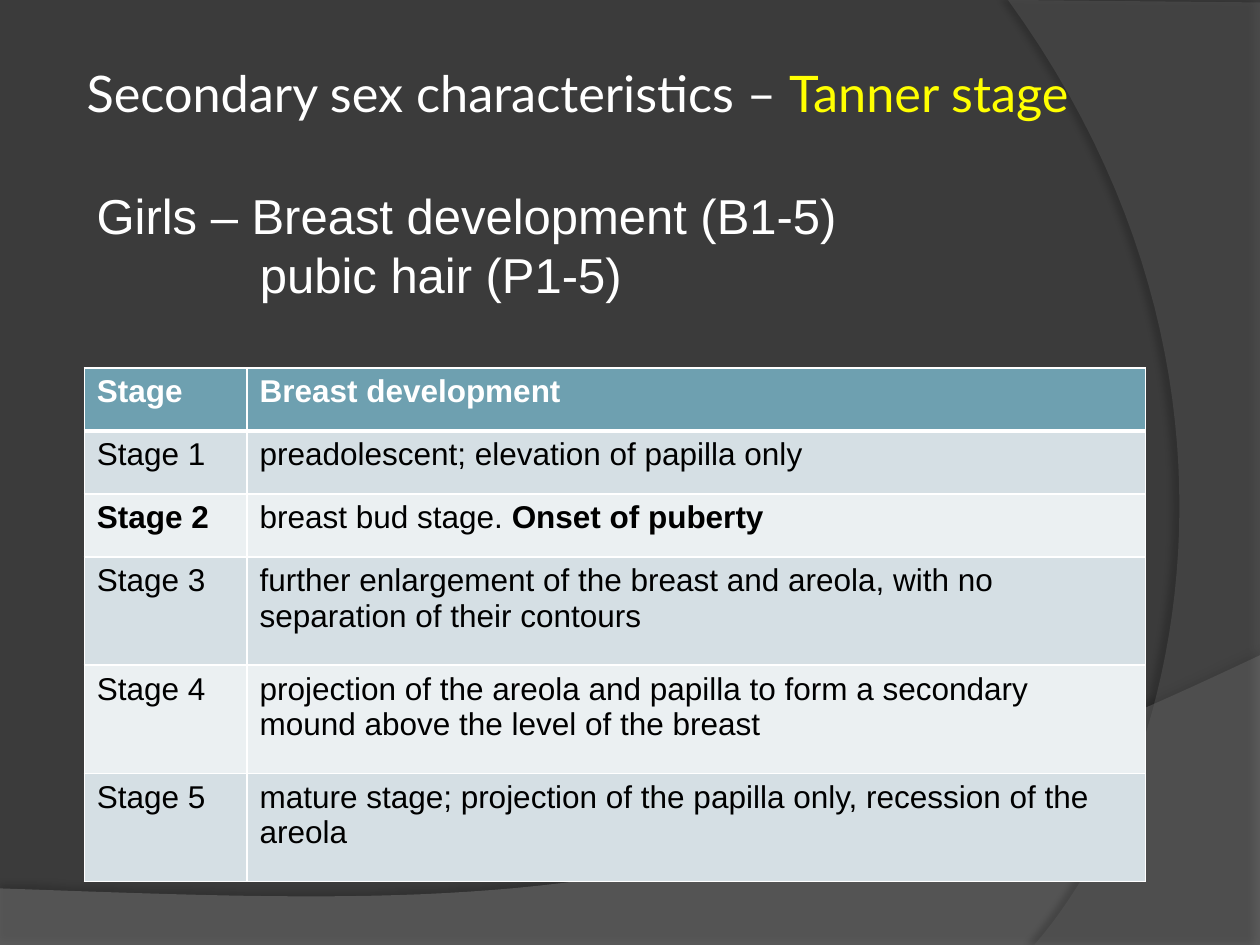
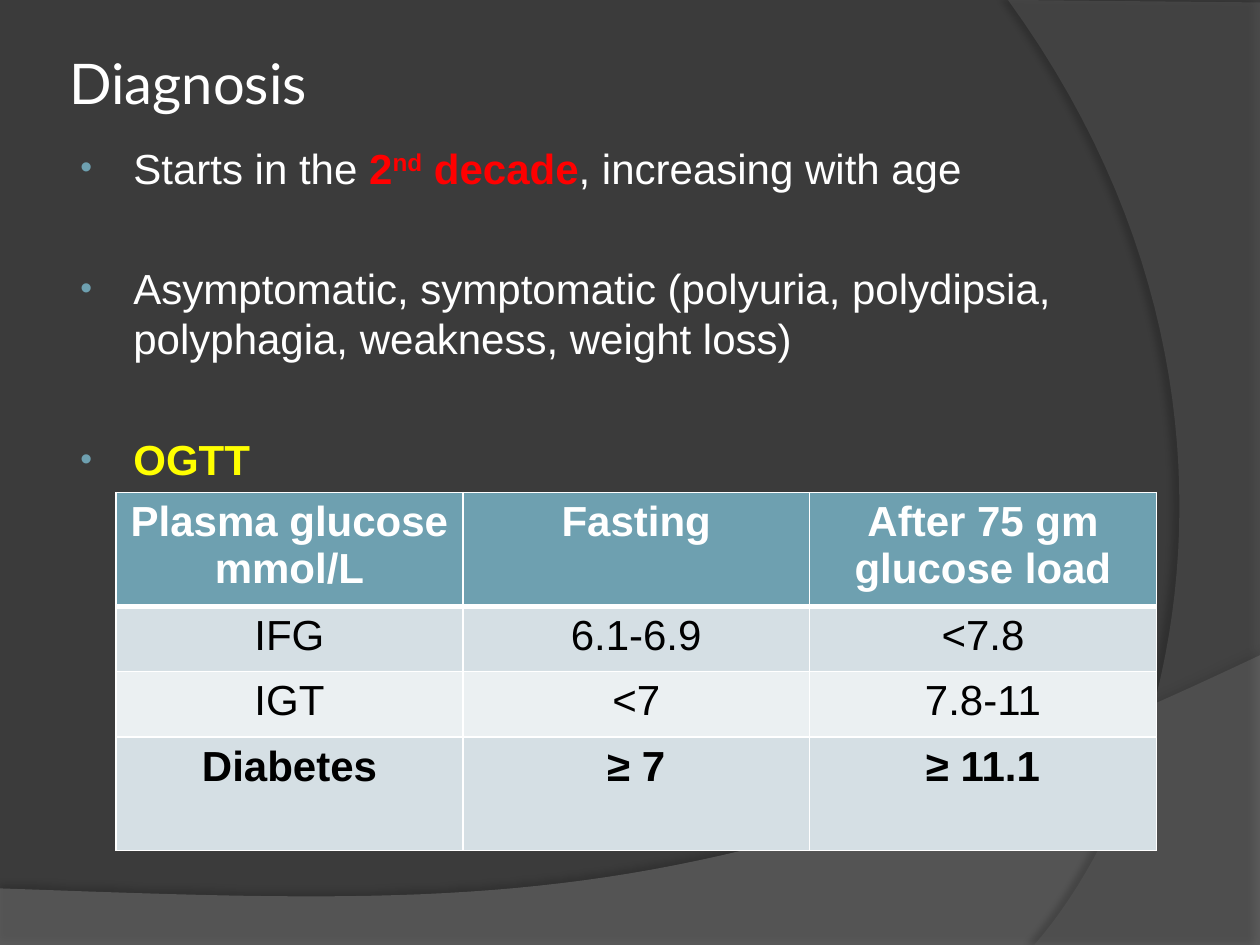
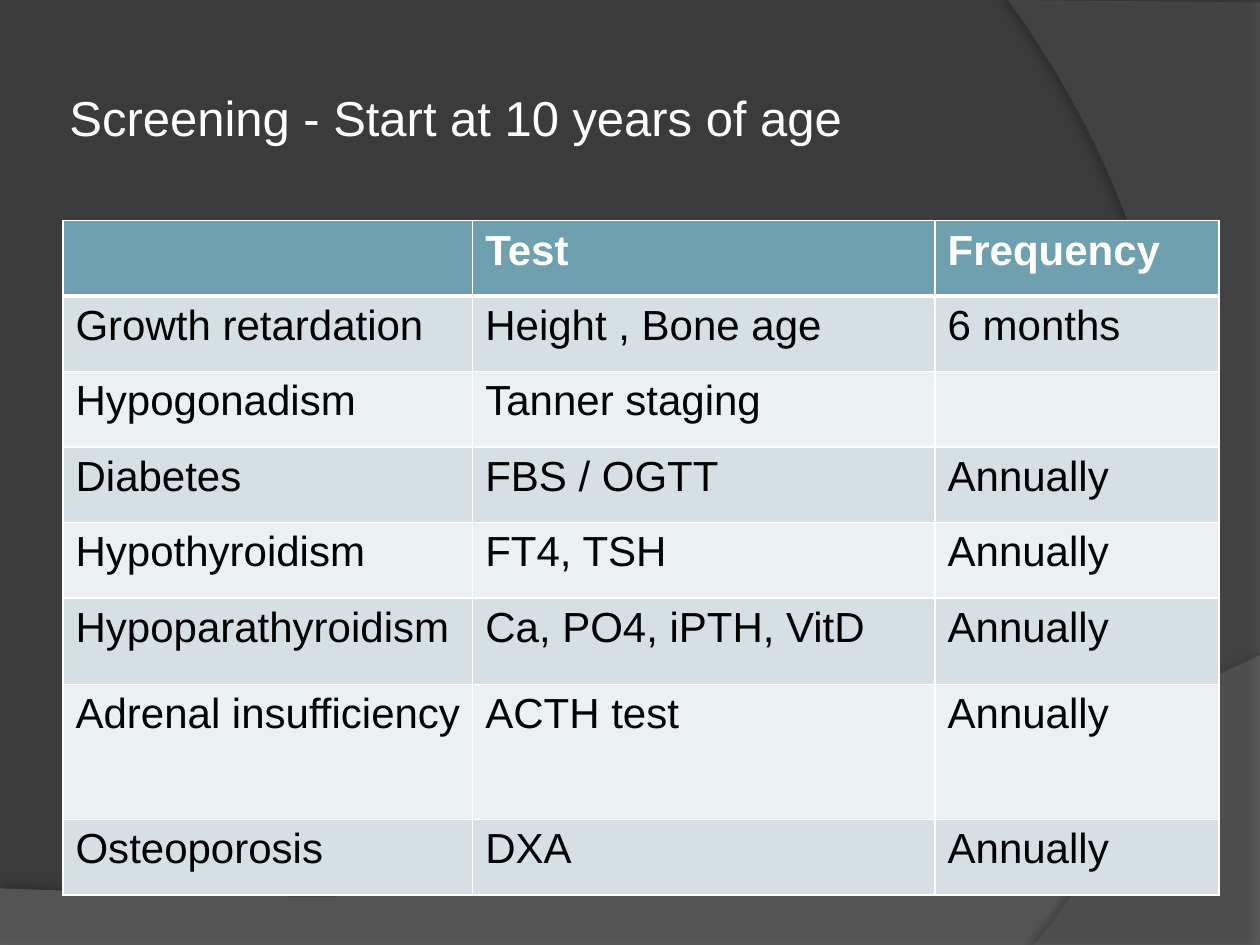
from dataclasses import dataclass

from lxml import etree
from pptx import Presentation
from pptx.dml.color import RGBColor
from pptx.enum.text import MSO_ANCHOR, MSO_AUTO_SIZE, PP_ALIGN
from pptx.oxml.ns import qn
from pptx.util import Cm, Pt

LEFT, CENTER = PP_ALIGN.LEFT, PP_ALIGN.CENTER
MIDDLE, TOP = MSO_ANCHOR.MIDDLE, MSO_ANCHOR.TOP
NO_AUTOFIT = MSO_AUTO_SIZE.NONE
TITLE_ONLY = 5
PAGE_WIDTH, PAGE_HEIGHT = 25.4, 19.05


@dataclass(frozen=True)
class Theme:
    background: RGBColor = RGBColor(0x3B, 0x3B, 0x3B)
    wave: RGBColor = RGBColor(0x7F, 0x7F, 0x7F)
    arc: RGBColor = RGBColor(0x5E, 0x5E, 0x5E)
    light: RGBColor = RGBColor(0xFF, 0xFF, 0xFF)
    dark: RGBColor = RGBColor(0, 0, 0)
    accent: RGBColor = RGBColor(0x6E, 0xA0, 0xB0)
    odd_row: RGBColor = RGBColor(0xD5, 0xDF, 0xE4)
    even_row: RGBColor = RGBColor(0xEB, 0xF0, 0xF2)
    highlight: RGBColor = RGBColor(0xFF, 0xFF, 0)
    warning: RGBColor = RGBColor(0xFF, 0, 0)
    heading_font: str = "Lato"
    body_font: str = "Arial"
    title_size: float = 32
    long_title_size: float = 28.8
    lead_size: float = 28
    body_size: float = 24
    small_size: float = 18
    rule: float = 1
    header_rule: float = 3


THEME = Theme()
BOLD = {"bold": True}
KEY = {"color": THEME.highlight}
ALERT = {"color": THEME.warning, "bold": True}

BREAST_STAGES = [
    ["Stage", "Breast development"],
    ["Stage 1", "preadolescent; elevation of papilla only"],
    [[("Stage 2", BOLD)], [("breast bud stage. ", {}), ("Onset of puberty", BOLD)]],
    ["Stage 3", "further enlargement of the breast and areola, with no separation of their contours"],
    ["Stage 4", "projection of the areola and papilla to form a secondary mound above the level of the breast"],
    ["Stage 5", "mature stage; projection of the papilla only, recession of the areola"],
]
GLUCOSE_LIMITS = [
    ["Plasma glucose\nmmol/L", "Fasting", "After 75 gm glucose load"],
    ["IFG", "6.1-6.9", "<7.8"],
    ["IGT", "<7", "7.8-11"],
    [[(text, BOLD)] for text in ("Diabetes", "≥ 7", "≥ 11.1")],
]
SCREENING_TESTS = [
    ["", "Test", "Frequency"],
    ["Growth retardation", "Height , Bone age", "6 months"],
    ["Hypogonadism", "Tanner staging", ""],
    ["Diabetes", "FBS / OGTT", "Annually"],
    ["Hypothyroidism", "FT4, TSH", "Annually"],
    ["Hypoparathyroidism", "Ca, PO4, iPTH, VitD", "Annually"],
    ["Adrenal insufficiency", "ACTH test", "Annually"],
    ["Osteoporosis", "DXA", "Annually"],
]
DIAGNOSIS_POINTS = [
    [("Starts in the ", {}), ("2", ALERT), ("nd", {**ALERT, "baseline": 30000}),
     (" decade", ALERT), (", increasing with age", {})],
    "Asymptomatic, symptomatic (polyuria, polydipsia, polyphagia, weakness, weight loss)",
    [("OGTT", {**KEY, **BOLD})],
]


def set_attributes(target, values):
    for name, value in values.items():
        setattr(target, name, value)


def add_xml(parent, tag, **attributes):
    return etree.SubElement(parent, qn(tag), {key: str(value) for key, value in attributes.items()})


def text_format(size, color=THEME.light, name=THEME.body_font, bold=False):
    return {"size": Pt(size), "color": color, "name": name, "bold": bold}


def write_runs(paragraph, content, base):
    runs = [(content, {})] if isinstance(content, str) else content
    for text, changes in runs:
        values = {**base, **changes}
        color = values.pop("color")
        baseline = values.pop("baseline", None)
        run = paragraph.add_run()
        run.text = text
        set_attributes(run.font, values)
        run.font.color.rgb = color
        if baseline:
            run._r.get_or_add_rPr().set("baseline", str(baseline))


def write_paragraphs(frame, contents, base, align=LEFT):
    for index, content in enumerate(contents):
        paragraph = frame.paragraphs[0] if index == 0 else frame.add_paragraph()
        paragraph.alignment = align
        write_runs(paragraph, content, base)


def set_indent(paragraph, margin, first_line=0):
    properties = paragraph._p.get_or_add_pPr()
    properties.set("marL", str(Cm(margin)))
    properties.set("indent", str(Cm(first_line)))
    return properties


def curve(start, control1, control2, end, steps=48):
    points = []
    for step in range(1, steps + 1):
        t = step / steps
        weights = ((1 - t) ** 3, 3 * t * (1 - t) ** 2, 3 * t * t * (1 - t), t ** 3)
        corners = (start, control1, control2, end)
        points.append(tuple(sum(w * c[axis] for w, c in zip(weights, corners)) for axis in (0, 1)))
    return points


def add_band(slide, outline, color, opacity, shadow_opacity, shadow_distance, shadow_angle):
    points = [(Cm(x), Cm(y)) for x, y in outline]
    builder = slide.shapes.build_freeform(*points[0])
    builder.add_line_segments(points[1:], close=True)
    band = builder.convert_to_shape()
    band.fill.solid()
    band.fill.fore_color.rgb = color
    band.line.fill.background()
    band.shadow.inherit = False
    properties = band.element.spPr
    add_xml(properties.find(f"{qn('a:solidFill')}/{qn('a:srgbClr')}"), "a:alpha", val=opacity * 1000)
    shadow = add_xml(properties.find(qn("a:effectLst")), "a:outerShdw", blurRad=Pt(4),
                     dist=Pt(shadow_distance), dir=shadow_angle * 60000, rotWithShape=0)
    shade = add_xml(shadow, "a:srgbClr", val=THEME.dark)
    add_xml(shade, "a:alpha", val=shadow_opacity * 1000)
    return band


def decorate_master(deck, slide):
    master = deck.slide_master
    master.background.fill.solid()
    master.background.fill.fore_color.rgb = THEME.background
    wave_left, wave_right = (0, 17.91), (PAGE_WIDTH, 13.21)
    wave = [wave_left, (0, PAGE_HEIGHT), (PAGE_WIDTH, PAGE_HEIGHT), wave_right,
            *curve(wave_right, (14.2, 18.52), (9.93, 18.26), wave_left)]
    arc_bottom, arc_top = (20.85, PAGE_HEIGHT), (20.32, 0)
    arc = [(PAGE_WIDTH, 0.05), (PAGE_WIDTH, PAGE_HEIGHT), arc_bottom,
           *curve(arc_bottom, (23.75, 15.72), (25.86, 7.62), arc_top)]
    bands = [add_band(slide, wave, THEME.wave, 45, 35, 3.5, 270),
             add_band(slide, arc, THEME.arc, 40, 45, 4, 180)]
    for position, band in enumerate(bands, start=2):
        master.shapes.element.insert(position, band.element)


def add_title(slide, content, width, height, base, align=LEFT):
    title = slide.shapes.title
    set_attributes(title, {"left": Cm(1.27), "top": Cm(0.76), "width": Cm(width), "height": Cm(height)})
    frame = title.text_frame
    inset = Cm(0.13)
    set_attributes(frame, {"margin_left": inset, "margin_right": inset, "margin_top": inset,
                           "margin_bottom": inset, "vertical_anchor": MIDDLE,
                           "word_wrap": True, "auto_size": NO_AUTOFIT})
    write_paragraphs(frame, [content], base, align)


def add_text(slide, box, contents, size):
    frame = slide.shapes.add_textbox(*map(Cm, box)).text_frame
    set_attributes(frame, {"word_wrap": True, "vertical_anchor": TOP})
    write_paragraphs(frame, contents, text_format(size))
    return frame


def add_bullets(slide, box, points):
    frame = add_text(slide, box, points, THEME.body_size)
    for index, paragraph in enumerate(frame.paragraphs):
        paragraph.space_before = Pt(40 if index else 5)
        properties = set_indent(paragraph, 1.17, -1.07)
        add_xml(add_xml(properties, "a:buClr"), "a:srgbClr", val=THEME.accent)
        add_xml(properties, "a:buSzPct", val=80000)
        add_xml(properties, "a:buFont", typeface=THEME.body_font)
        add_xml(properties, "a:buChar", char="•")


def add_borders(cell, row):
    widths = {"a:lnL": THEME.rule, "a:lnR": THEME.rule,
              "a:lnT": THEME.header_rule if row == 1 else THEME.rule,
              "a:lnB": THEME.header_rule if row == 0 else THEME.rule}
    properties = cell._tc.get_or_add_tcPr()
    for side, width in widths.items():
        border = add_xml(properties, side, w=Pt(width))
        add_xml(add_xml(border, "a:solidFill"), "a:srgbClr", val=THEME.light)


def fill_cell(cell, content, row, size, align):
    add_borders(cell, row)
    cell.fill.solid()
    if row == 0:
        color, base = THEME.accent, text_format(size, bold=True)
    else:
        color = THEME.odd_row if row % 2 else THEME.even_row
        base = text_format(size, THEME.dark)
    cell.fill.fore_color.rgb = color
    if content:
        paragraphs = content.split("\n") if isinstance(content, str) else [content]
        write_paragraphs(cell.text_frame, paragraphs, base, align)


def add_grid(slide, left, top, widths, heights, rows, size, align=LEFT):
    grid = slide.shapes.add_table(len(rows), len(widths), Cm(left), Cm(top),
                                  Cm(sum(widths)), Cm(sum(heights))).table
    for column, width in zip(grid.columns, widths):
        column.width = Cm(width)
    for index, (height, contents) in enumerate(zip(heights, rows)):
        grid.rows[index].height = Cm(height)
        for column, content in enumerate(contents):
            fill_cell(grid.cell(index, column), content, index, size, align)


def build_tanner(slide):
    add_title(slide, [("Secondary sex characteristics – ", {}), ("Tanner stage", KEY)], 20.75, 2.21,
              text_format(THEME.long_title_size, name=THEME.heading_font), CENTER)
    lead = add_text(slide, (1.7, 3.61, 20.96, 2.64),
                    ["Girls – Breast development (B1-5)", "pubic hair (P1-5)"], THEME.lead_size)
    set_indent(lead.paragraphs[1], 3.29)
    add_grid(slide, 1.7, 7.42, [3.28, 18.11], [1.27] * 3 + [2.18] * 3, BREAST_STAGES, THEME.small_size)


def build_diagnosis(slide):
    add_title(slide, "Diagnosis", 22.86, 1.78, text_format(THEME.title_size, name=THEME.heading_font))
    add_bullets(slide, (1.27, 2.74, 22.86, 15.24), DIAGNOSIS_POINTS)
    add_grid(slide, 2.34, 9.93, [6.99] * 3, [2.29, 1.32, 1.32, 2.29],
             GLUCOSE_LIMITS, THEME.body_size, CENTER)


def build_screening(slide):
    add_title(slide, "Screening - Start at 10 years of age", 20.75, 3.18, text_format(THEME.lead_size))
    add_grid(slide, 1.27, 4.45, [8.26, 9.32, 5.72], [1.52] * 5 + [1.75, 2.72, 1.52],
             SCREENING_TESTS, THEME.body_size)


def main():
    deck = Presentation()
    set_attributes(deck, {"slide_width": Cm(PAGE_WIDTH), "slide_height": Cm(PAGE_HEIGHT)})
    builders = (build_tanner, build_diagnosis, build_screening)
    slides = [deck.slides.add_slide(deck.slide_layouts[TITLE_ONLY]) for _ in builders]
    decorate_master(deck, slides[0])
    for build, slide in zip(builders, slides):
        build(slide)
    deck.save("out.pptx")


if __name__ == "__main__":
    main()
